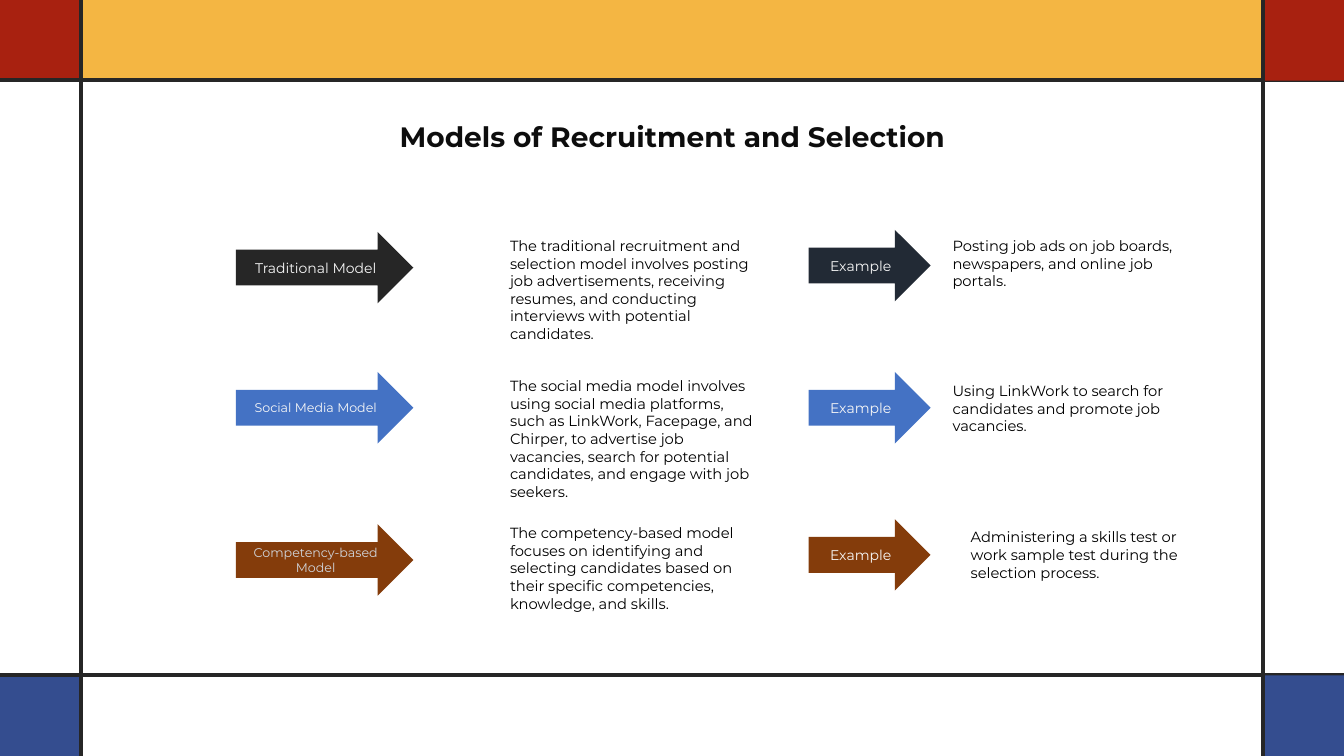
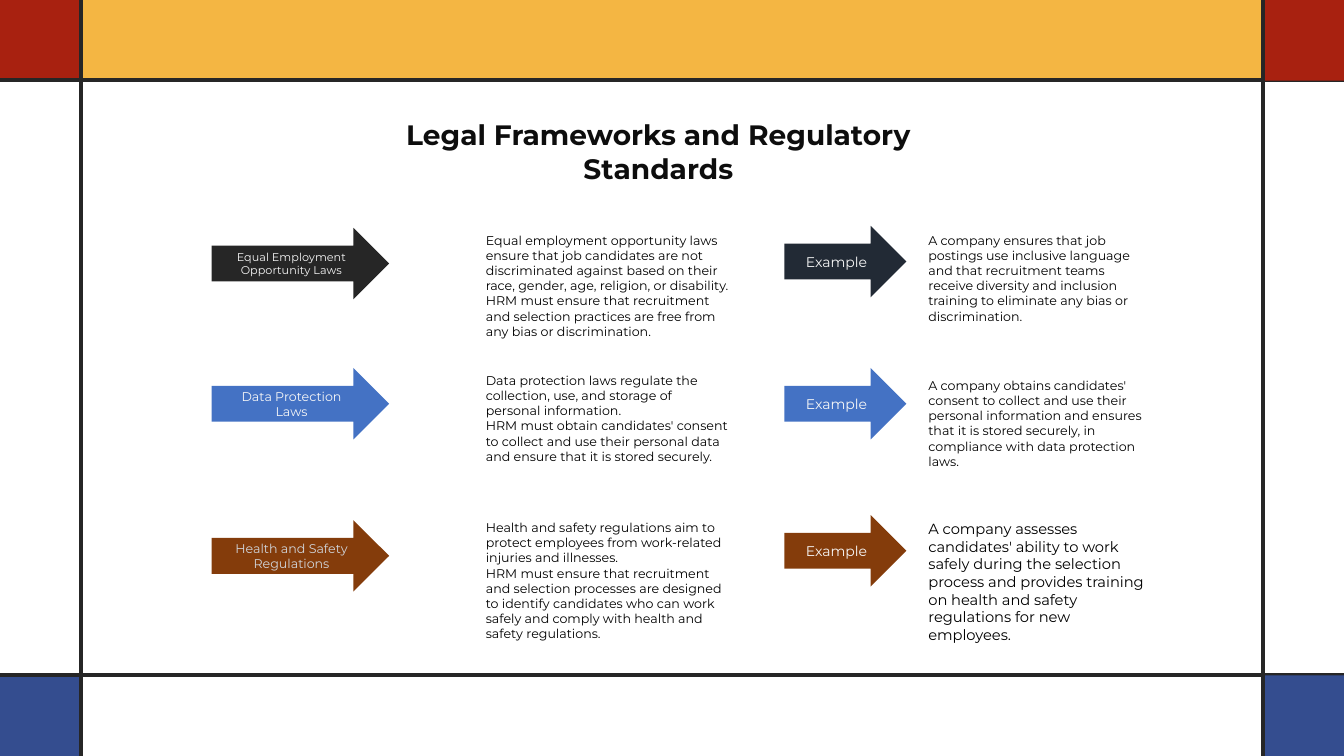
from dataclasses import dataclass

from lxml.etree import SubElement
from pptx import Presentation
from pptx.dml.color import RGBColor
from pptx.enum.shapes import MSO_CONNECTOR, MSO_SHAPE
from pptx.enum.text import MSO_ANCHOR, MSO_AUTO_SIZE, PP_ALIGN
from pptx.oxml.ns import qn
from pptx.util import Inches, Pt


@dataclass(frozen=True)
class Theme:
    font: str = "Montserrat"
    yellow: str = "F4B643"
    blue: str = "344D8F"
    red: str = "A82110"
    rule: str = "262626"
    title: str = "0D0D0D"
    body: str = "000000"
    light: str = "F7F7F7"
    label_fills: tuple = ("262626", "4472C4", "843C0B")
    label_colors: tuple = ("F7F7F7", "F7F7F7", "D1D5DB")
    example_fills: tuple = ("222A35", "4472C4", "843C0B")
    title_size: float = 20
    body_size: float = 10.5
    compact_size: float = 9
    example_size: float = 10
    rule_width: float = 2.75


@dataclass(frozen=True)
class Row:
    label: str
    label_size: float
    description: str
    note: str
    description_size: float
    note_size: float
    note_shift: tuple = (0, 0)


THEME = Theme()
WIDTH, HEIGHT, BAND = 13.33, 7.5, 0.8
RIGHT, BOTTOM = WIDTH - BAND, HEIGHT - BAND

# Column offsets from the left of the grid, row offsets from its top
DESCRIPTION_X, EXAMPLE_X, NOTE_X = 2.62, 5.68, 7.01
LABEL_Y = (0, 1.39, 2.9)
DESCRIPTION_Y = (0, 1.39, 2.85)
EXAMPLE_Y = (-0.02, 1.39, 2.85)
NOTE_Y = (0, 1.44, 2.85)
LABEL_WIDTH, EXAMPLE_WIDTH, ARROW_HEIGHT = 1.76, 1.21, 0.71
DESCRIPTION_WIDTH, NOTE_WIDTH, TEXT_HEIGHT = 2.61, 2.4, 1.16
TITLE_WIDTH, TITLE_HEIGHT = 6.68, 0.44

MODELS = (
    Row(
        "Traditional Model", 10,
        "The traditional recruitment and selection model involves posting job "
        "advertisements, receiving resumes, and conducting interviews with "
        "potential candidates.",
        "Posting job ads on job boards, newspapers, and online job\nportals.",
        THEME.body_size, THEME.body_size,
    ),
    Row(
        "Social Media Model", 9,
        "The social media model involves using social media platforms, such as "
        "LinkWork, Facepage, and Chirper, to advertise job vacancies, search for "
        "potential candidates, and engage with job seekers.",
        "Using LinkWork to search for\ncandidates and promote job\nvacancies.",
        THEME.body_size, THEME.body_size,
    ),
    Row(
        "Competency-based Model", 9,
        "The competency-based model focuses on identifying and selecting "
        "candidates based on their specific competencies, knowledge, and skills.",
        "Administering a skills test or\nwork sample test during the\n"
        "selection process.",
        THEME.body_size, THEME.body_size, (0.18, 0.04),
    ),
)

REGULATIONS = (
    Row(
        "Equal Employment\nOpportunity Laws", 8,
        "Equal employment opportunity laws ensure that job candidates are not "
        "discriminated against based on their race, gender, age, religion, or "
        "disability.\n"
        "HRM must ensure that recruitment and selection practices are free from "
        "any bias or discrimination.",
        "A company ensures that job postings use inclusive language and that "
        "recruitment teams receive diversity and inclusion training to eliminate "
        "any bias or discrimination.",
        THEME.compact_size, THEME.compact_size,
    ),
    Row(
        "Data Protection\nLaws", 9,
        "Data protection laws regulate the collection, use, and storage of "
        "personal information.\n"
        "HRM must obtain candidates' consent to collect and use their personal "
        "data and ensure that it is stored securely.",
        "A company obtains candidates' consent to collect and use their personal "
        "information and ensures that it is stored securely, in compliance with "
        "data protection laws.",
        THEME.compact_size, THEME.compact_size,
    ),
    Row(
        "Health and Safety\nRegulations", 9,
        "Health and safety regulations aim to protect employees from work-related "
        "injuries and illnesses.\n"
        "HRM must ensure that recruitment and selection processes are designed to "
        "identify candidates who can work safely and comply with health and "
        "safety regulations.",
        "A company assesses candidates' ability to work safely during the "
        "selection process and provides training on health and safety regulations "
        "for new employees.",
        THEME.compact_size, THEME.body_size,
    ),
)


class Deck:
    """Holds the theme, the presentation and the slide being drawn."""

    def __init__(self, theme):
        self.theme = theme
        self.presentation = Presentation()
        self.presentation.slide_width = Inches(WIDTH)
        self.presentation.slide_height = Inches(HEIGHT)
        self.layout = self.presentation.slide_layouts[5]
        self.slide = None

    def add_slide(self, title, left, top):
        first = self.slide is None
        self.slide = self.presentation.slides.add_slide(self.layout)
        if first:
            self.frame_layout()
        placeholder = self.slide.shapes.title
        placeholder.left, placeholder.top = Inches(left), Inches(top)
        placeholder.width, placeholder.height = Inches(TITLE_WIDTH), Inches(TITLE_HEIGHT)
        text_frame = placeholder.text_frame
        text_frame.vertical_anchor = MSO_ANCHOR.TOP
        text_frame.auto_size = MSO_AUTO_SIZE.NONE
        self.fill_text(text_frame, title, self.theme.title_size, self.theme.title,
                       PP_ALIGN.CENTER, bold=True)

    def frame_layout(self):
        """Draw the coloured frame, then move it to the layout shared by all slides."""
        theme = self.theme
        frame = [
            self.block(BAND, 0, RIGHT - BAND, BAND, theme.yellow),
            self.block(0, BOTTOM, BAND, BAND, theme.blue),
            self.block(0, 0, BAND, BAND, theme.red),
            self.rule(0, BAND - 0.01, WIDTH, BAND - 0.01),
            self.rule(0, BOTTOM, WIDTH, BOTTOM),
            self.rule(BAND, 0, BAND, HEIGHT),
            self.block(RIGHT, BOTTOM, BAND, BAND, theme.blue),
            self.block(RIGHT, 0, BAND, BAND, theme.red),
            self.rule(RIGHT, 0, RIGHT, HEIGHT),
        ]
        for number, shape in enumerate(frame):
            shape.element.xpath(".//p:cNvPr")[0].set("id", str(100 + number))
            self.layout.shapes.element.insert(2 + number, shape.element)

    def block(self, left, top, width, height, fill, preset=MSO_SHAPE.RECTANGLE):
        shape = self.slide.shapes.add_shape(
            preset, Inches(left), Inches(top), Inches(width), Inches(height))
        shape.shadow.inherit = False
        shape.fill.solid()
        shape.fill.fore_color.rgb = RGBColor.from_string(fill)
        shape.line.fill.background()
        return shape

    def rule(self, start_x, start_y, end_x, end_y):
        connector = self.slide.shapes.add_connector(
            MSO_CONNECTOR.STRAIGHT, Inches(start_x), Inches(start_y),
            Inches(end_x), Inches(end_y))
        connector.line.color.rgb = RGBColor.from_string(self.theme.rule)
        connector.line.width = Pt(self.theme.rule_width)
        SubElement(connector.element.spPr, qn("a:effectLst"))
        return connector

    def arrow(self, left, top, width, text, size, fill, color):
        shape = self.block(left, top, width, ARROW_HEIGHT, fill, MSO_SHAPE.RIGHT_ARROW)
        shape.text_frame.vertical_anchor = MSO_ANCHOR.MIDDLE
        self.fill_text(shape.text_frame, text, size, color, PP_ALIGN.CENTER)

    def text(self, left, top, width, text, size):
        box = self.slide.shapes.add_textbox(
            Inches(left), Inches(top), Inches(width), Inches(TEXT_HEIGHT))
        box.text_frame.auto_size = MSO_AUTO_SIZE.SHAPE_TO_FIT_TEXT
        self.fill_text(box.text_frame, text, size, self.theme.body, PP_ALIGN.LEFT)

    def fill_text(self, text_frame, text, size, color, alignment, bold=False):
        text_frame.word_wrap = True
        text_frame.text = text
        for paragraph in text_frame.paragraphs:
            paragraph.alignment = alignment
            for run in paragraph.runs:
                run.font.name = self.theme.font
                run.font.size = Pt(size)
                run.font.bold = bold
                run.font.color.rgb = RGBColor.from_string(color)

    def grid(self, rows, left, top):
        """Draw each row as label arrow, description, example arrow and note."""
        theme = self.theme
        for index, row in enumerate(rows):
            self.arrow(left, top + LABEL_Y[index], LABEL_WIDTH, row.label,
                       row.label_size, theme.label_fills[index],
                       theme.label_colors[index])
            self.text(left + DESCRIPTION_X, top + DESCRIPTION_Y[index],
                      DESCRIPTION_WIDTH, row.description, row.description_size)
            self.arrow(left + EXAMPLE_X, top + EXAMPLE_Y[index], EXAMPLE_WIDTH,
                       "Example", theme.example_size, theme.example_fills[index],
                       theme.light)
            shift_x, shift_y = row.note_shift
            self.text(left + NOTE_X + shift_x, top + NOTE_Y[index] + shift_y,
                      NOTE_WIDTH, row.note, row.note_size)


def main():
    deck = Deck(THEME)
    deck.add_slide("Models of Recruitment and Selection", 3.33, 1.14)
    deck.grid(MODELS, 2.34, 2.3)
    deck.add_slide("Legal Frameworks and Regulatory Standards", 3.19, 1.12)
    deck.grid(REGULATIONS, 2.1, 2.26)
    deck.presentation.save("out.pptx")


if __name__ == "__main__":
    main()
